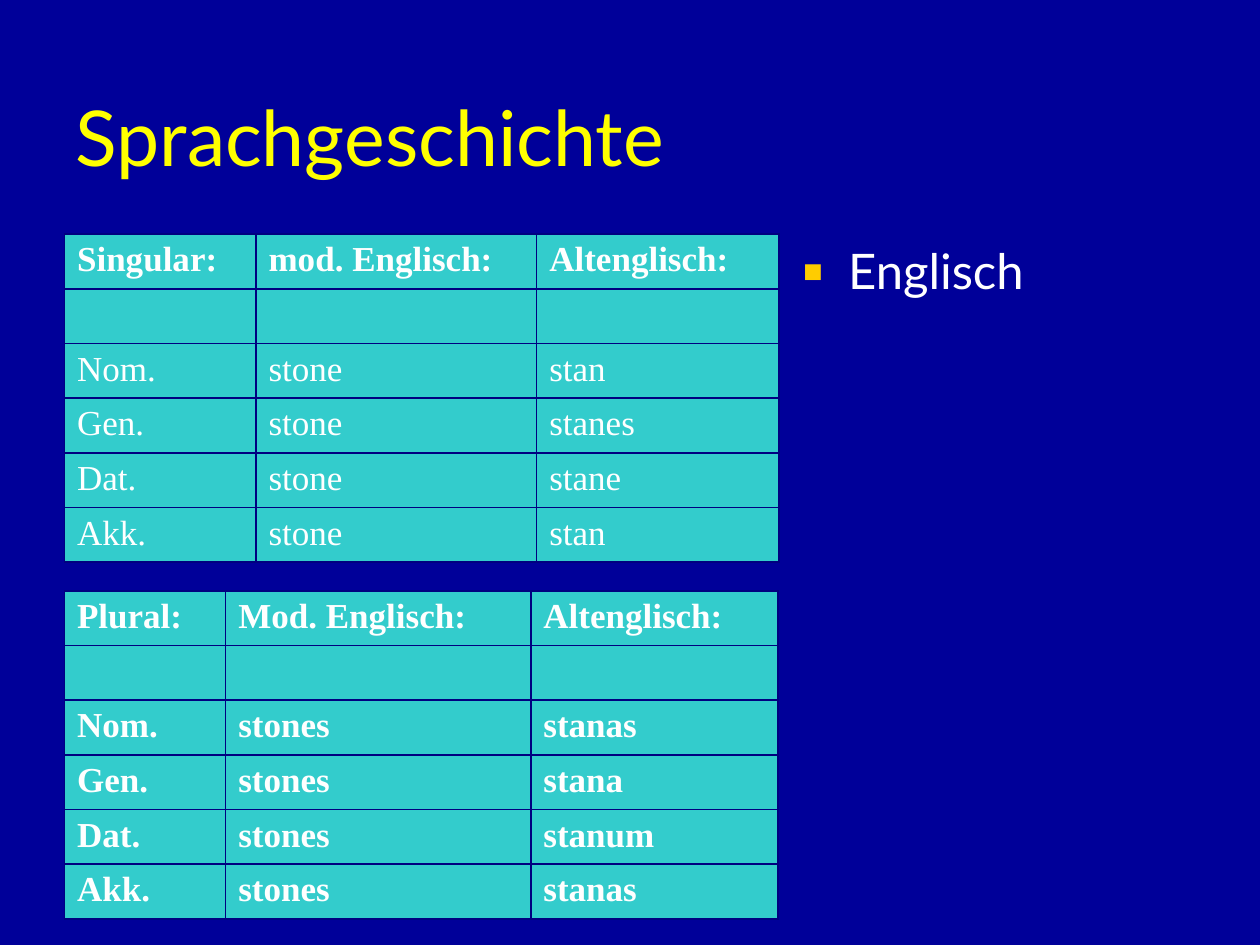
from lxml import etree
from pptx import Presentation
from pptx import util as u
from pptx.dml.color import RGBColor
from pptx.enum import text
from pptx.oxml.ns import qn

COLORS = {
    "background": "000099",
    "title": "FFFF00",
    "text": "FFFFFF",
    "bullet": "FFCC00",
    "cell": "33CCCC",
    "border": "000080",
}
TITLE = "Sprachgeschichte"
TOPIC = "Englisch"
TABLES = [
    {
        "top": 4.72,
        "columns": [3.86, 5.66, 4.88],
        "bold_body": False,
        "rows": [
            ("Singular:", "mod. Englisch:", "Altenglisch:"),
            ("", "", ""),
            ("Nom.", "stone", "stan"),
            ("Gen.", "stone", "stanes"),
            ("Dat.", "stone", "stane"),
            ("Akk.", "stone", "stan"),
        ],
    },
    {
        "top": 11.91,
        "columns": [3.25, 6.15, 4.98],
        "bold_body": True,
        "rows": [
            ("Plural:", "Mod. Englisch:", "Altenglisch:"),
            ("", "", ""),
            ("Nom.", "stones", "stanas"),
            ("Gen.", "stones", "stana"),
            ("Dat.", "stones", "stanum"),
            ("Akk.", "stones", "stanas"),
        ],
    },
]
TABLE_LEFT = 1.3
ROW_HEIGHT = 1.1


def rgb(name):
    return RGBColor.from_string(COLORS[name])


def write(frame, words, *, size, font="Lato", color="text", bold=False):
    para = frame.paragraphs[0]
    para.alignment = text.PP_ALIGN.LEFT
    para.font.size = u.Pt(size)
    if words:
        span = para.add_run()
        span.text = words
        span.font.size = u.Pt(size)
        span.font.name = font
        span.font.bold = bold
        span.font.color.rgb = rgb(color)
    return para


def add_bullet(para, indent):
    properties = para._p.get_or_add_pPr()
    properties.set("marL", str(indent))
    properties.set("indent", str(-indent))
    color = etree.SubElement(properties, qn("a:buClr"))
    etree.SubElement(color, qn("a:srgbClr"), val=COLORS["bullet"])
    etree.SubElement(properties, qn("a:buSzPct"), val="120000")
    etree.SubElement(properties, qn("a:buFont"), typeface="Lato")
    etree.SubElement(properties, qn("a:buChar"), char="▪")


def add_borders(cell):
    properties = cell._tc.get_or_add_tcPr()
    for side in ("lnL", "lnR", "lnT", "lnB"):
        line = etree.SubElement(properties, qn(f"a:{side}"), w=str(u.Pt(1)))
        fill = etree.SubElement(line, qn("a:solidFill"))
        etree.SubElement(fill, qn("a:srgbClr"), val=COLORS["border"])


def add_declension(page, top, columns, rows, bold_body):
    table = page.shapes.add_table(
        len(rows), len(columns), u.Cm(TABLE_LEFT), u.Cm(top),
        u.Cm(sum(columns)), u.Cm(ROW_HEIGHT * len(rows)),
    ).table
    table.first_row = table.horz_banding = False
    for column, width in zip(table.columns, columns):
        column.width = u.Cm(width)
    for row_index, words in enumerate(rows):
        table.rows[row_index].height = u.Cm(ROW_HEIGHT)
        for column_index, word in enumerate(words):
            cell = table.cell(row_index, column_index)
            add_borders(cell)
            cell.fill.solid()
            cell.fill.fore_color.rgb = rgb("cell")
            write(cell.text_frame, word, size=20, font="Times New Roman",
                  bold=bold_body or row_index == 0)


def main():
    deck = Presentation()
    deck.slide_width, deck.slide_height = u.Cm(25.4), u.Cm(19.05)
    page = deck.slides.add_slide(deck.slide_layouts[5])
    page.background.fill.solid()
    page.background.fill.fore_color.rgb = rgb("background")

    title = page.shapes.title
    title.left, title.top = u.Cm(1.27), u.Cm(0.81)
    title.width, title.height = u.Cm(22.86), u.Cm(3.84)
    title.text_frame.vertical_anchor = text.MSO_ANCHOR.MIDDLE
    write(title.text_frame, TITLE, size=44, color="title")

    box = page.shapes.add_textbox(u.Cm(15.9), u.Cm(4.72), u.Cm(8.23), u.Cm(5.59))
    box.text_frame.word_wrap = True
    para = write(box.text_frame, TOPIC, size=28)
    properties = para._p.get_or_add_pPr()
    for default in properties.findall(qn("a:defRPr")):
        properties.remove(default)
    add_bullet(para, u.Cm(0.95))

    for table in TABLES:
        add_declension(page, **table)
    deck.save("out.pptx")


if __name__ == "__main__":
    main()
